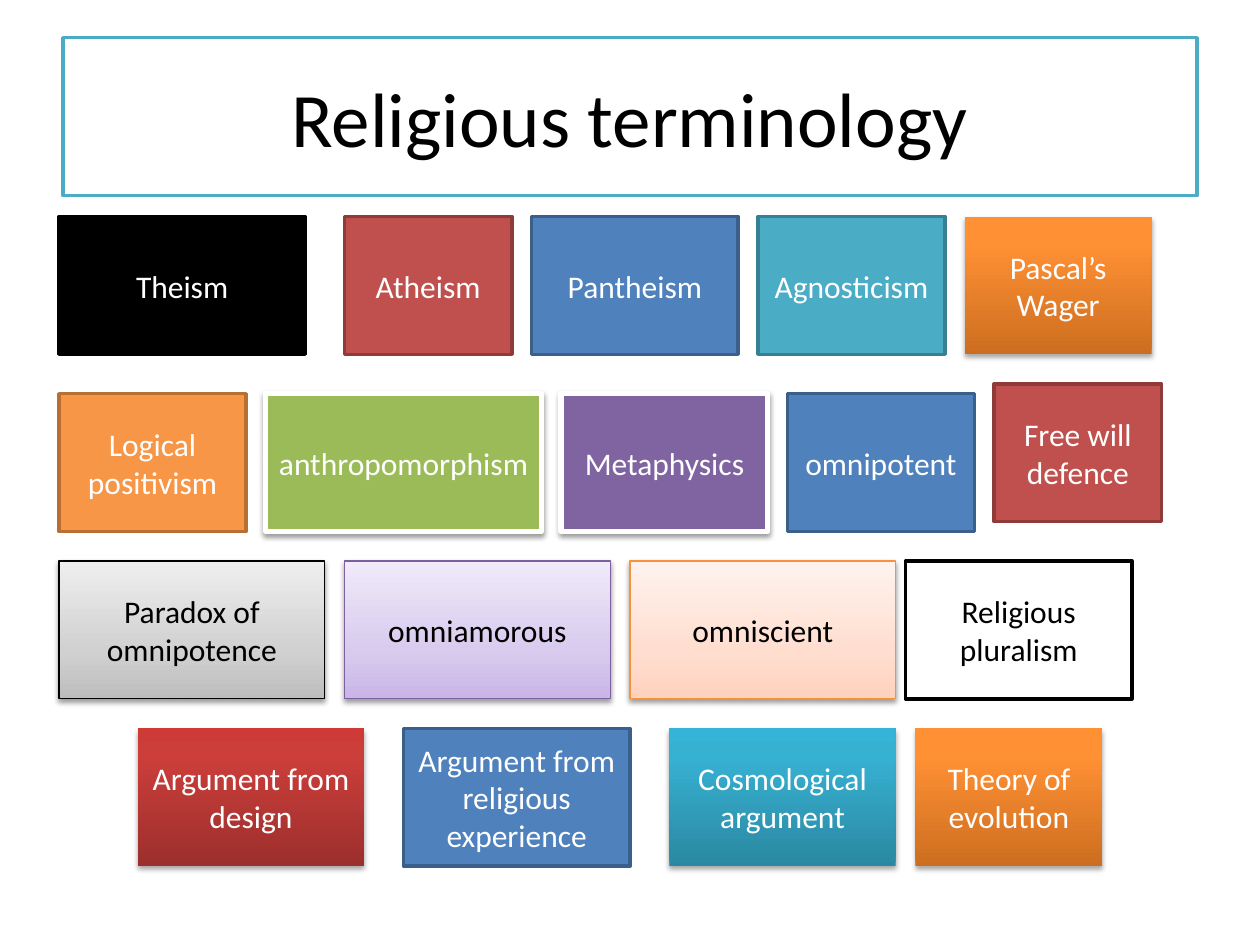
from copy import deepcopy
from dataclasses import dataclass

from lxml import etree
from pptx import Presentation
from pptx.dml.color import RGBColor
from pptx.enum.shapes import MSO_SHAPE
from pptx.enum.text import MSO_ANCHOR, PP_ALIGN
from pptx.oxml.ns import qn
from pptx.util import Cm, Pt

RECTANGLE = MSO_SHAPE.RECTANGLE
MIDDLE = MSO_ANCHOR.MIDDLE
CENTER = PP_ALIGN.CENTER

SLIDE_WIDTH, SLIDE_HEIGHT = Cm(25.4), Cm(19.05)
GRID = SLIDE_WIDTH / 128  # every card sits on this grid
CARD_HEIGHT = 14


@dataclass(frozen=True)
class CardStyle:
    fill: str = ""
    line: str = ""
    line_width: float = 2
    text: str = "FFFFFF"
    stops: tuple = ()  # (position, colour), from bottom to top
    shadow: tuple = ()  # (opacity %, blur pt, distance pt)


class Theme:
    font = "Calibri"
    title_size, card_size = Pt(44), Pt(18)
    title = CardStyle("FFFFFF", "4BACC6", text="000000")
    soft_shadow = (38, 3.1, 1.6)
    deep_shadow = (35, 3.1, 1.8)

    black = CardStyle("000000", "000000")
    white = CardStyle("FFFFFF", "000000", text="000000")
    red = CardStyle("C0504D", "8E3B39")
    blue = CardStyle("4F81BD", "3A5F8C")
    aqua = CardStyle("4BACC6", "377F92")
    orange = CardStyle("F79646", "B76F34")
    framed_green = CardStyle("9BBB59", "FFFFFF", 3, shadow=soft_shadow)
    framed_purple = CardStyle("8064A2", "FFFFFF", 3, shadow=soft_shadow)
    pale_grey = CardStyle(
        line="000000", line_width=0.75, text="000000", shadow=soft_shadow,
        stops=((0, "BDBDBD"), (0.35, "D1D1D1"), (1, "EEEEEE")))
    pale_purple = CardStyle(
        line="7D60A0", line_width=0.75, text="000000", shadow=soft_shadow,
        stops=((0, "C9B5E8"), (0.35, "D8CBEE"), (1, "F0EAF9")))
    pale_orange = CardStyle(
        line="F69240", line_width=0.75, text="000000", shadow=soft_shadow,
        stops=((0, "FFD2BD"), (0.35, "FFDED0"), (1, "FFF2ED")))
    glossy_red = CardStyle(
        stops=((0, "9C2F2D"), (0.8, "CB3E3A"), (1, "CE3B37")), shadow=deep_shadow)
    glossy_aqua = CardStyle(
        stops=((0, "2A88A2"), (0.8, "37B1D2"), (1, "34B4D6")), shadow=deep_shadow)
    glossy_orange = CardStyle(
        stops=((0, "CC6E20"), (0.8, "FF9034"), (1, "FF9136")), shadow=deep_shadow)


# Each row: left, top, cards; each card: gap before, width, lift, text, style.
ROWS = (
    (6, 22, (
        (0, 25, 0, "Theism", Theme.black),
        (4, 17, 0, "Atheism", Theme.red),
        (2, 21, 0, "Pantheism", Theme.blue),
        (2, 19, 0, "Agnosticism", Theme.aqua),
        (2, 19, 0, "Pascal’s Wager", Theme.glossy_orange),
    )),
    (6, 40, (
        (0, 19, 0, "Logical positivism", Theme.orange),
        (2, 28, 0, "anthropomorphism", Theme.framed_green),
        (2, 21, 0, "Metaphysics", Theme.framed_purple),
        (2, 19, 0, "omnipotent", Theme.blue),
        (2, 17, 1, "Free will defence", Theme.red),
    )),
    (6, 57, (
        (0, 27, 0, "Paradox of omnipotence", Theme.pale_grey),
        (2, 27, 0, "omniamorous", Theme.pale_purple),
        (2, 27, 0, "omniscient", Theme.pale_orange),
        (1, 23, 0, "Religious pluralism", Theme.white),
    )),
    (14, 74, (
        (0, 23, 0, "Argument from design", Theme.glossy_red),
        (4, 23, 0, "Argument from religious experience", Theme.blue),
        (4, 23, 0, "Cosmological argument", Theme.glossy_aqua),
        (2, 19, 0, "Theory of evolution", Theme.glossy_orange),
    )),
)


def set_gradient(shape, stops):
    shape.fill.gradient()
    shape.fill.gradient_angle = 90
    stop_list = next(shape.element.iter(qn("a:gsLst")))
    while len(stop_list) < len(stops):
        stop_list.append(deepcopy(stop_list[0]))
    for stop, (position, color) in zip(shape.fill.gradient_stops, stops):
        stop.position = position
        stop.color.rgb = RGBColor.from_string(color)


def add_shadow(shape, opacity, blur, distance):
    effects = shape.element.spPr.find(qn("a:effectLst"))
    outer = etree.SubElement(
        effects, qn("a:outerShdw"), blurRad=str(Pt(blur)), dist=str(Pt(distance)),
        dir="5400000", rotWithShape="0")
    color = etree.SubElement(outer, qn("a:srgbClr"), val="000000")
    etree.SubElement(color, qn("a:alpha"), val=str(opacity * 1000))


def dress(shape, text, size, style):
    """Give a shape its text, fill, outline and shadow."""
    if style.stops:
        set_gradient(shape, style.stops)
    else:
        shape.fill.solid()
        shape.fill.fore_color.rgb = RGBColor.from_string(style.fill)
    if style.line:
        shape.line.color.rgb = RGBColor.from_string(style.line)
        shape.line.width = Pt(style.line_width)
    else:
        shape.line.fill.background()
    frame = shape.text_frame
    frame.text = text
    frame.word_wrap = True
    frame.vertical_anchor = MIDDLE
    para = frame.paragraphs[0]
    para.alignment = CENTER
    para.font.name = Theme.font
    para.font.size = size
    para.font.color.rgb = RGBColor.from_string(style.text)


def place_title(page, left, top, width, height):
    title = page.shapes.title
    title.left, title.top, title.width, title.height = left, top, width, height
    dress(title, "Religious terminology", Theme.title_size, Theme.title)


def add_card_row(page, left, top, cards):
    """Lay cards from left to right; all lengths are in grid units."""
    for gap, width, lift, text, style in cards:
        left += gap
        box = [round(units * GRID) for units in (left, top - lift, width, CARD_HEIGHT)]
        card = page.shapes.add_shape(RECTANGLE, *box)
        card.shadow.inherit = False
        dress(card, text, Theme.card_size, style)
        if style.shadow:
            add_shadow(card, *style.shadow)
        left += width


def main():
    deck = Presentation()
    deck.slide_width, deck.slide_height = SLIDE_WIDTH, SLIDE_HEIGHT
    page = deck.slides.add_slide(deck.slide_layouts.get_by_name("Title Only"))
    place_title(page, Cm(1.27), Cm(0.76), Cm(22.86), Cm(3.18))
    for left, top, cards in ROWS:
        add_card_row(page, left, top, cards)
    deck.save("out.pptx")


if __name__ == "__main__":
    main()
